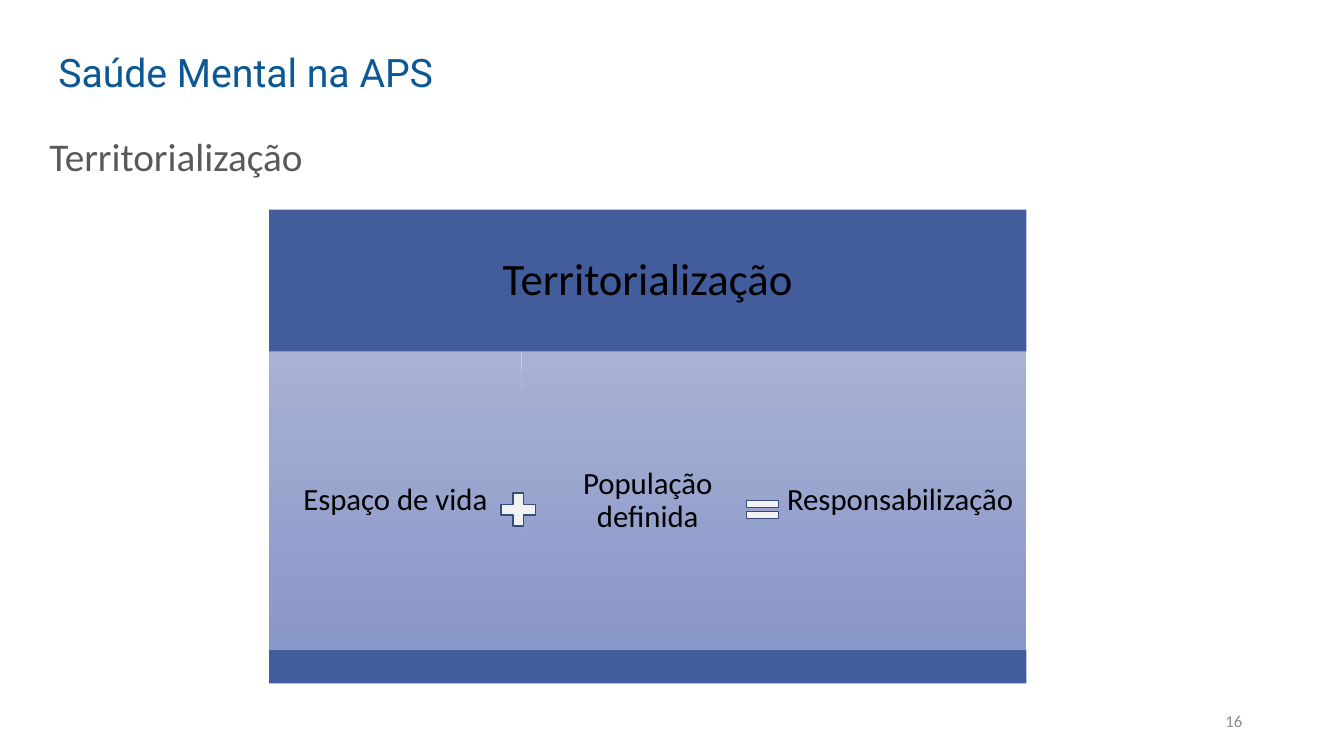
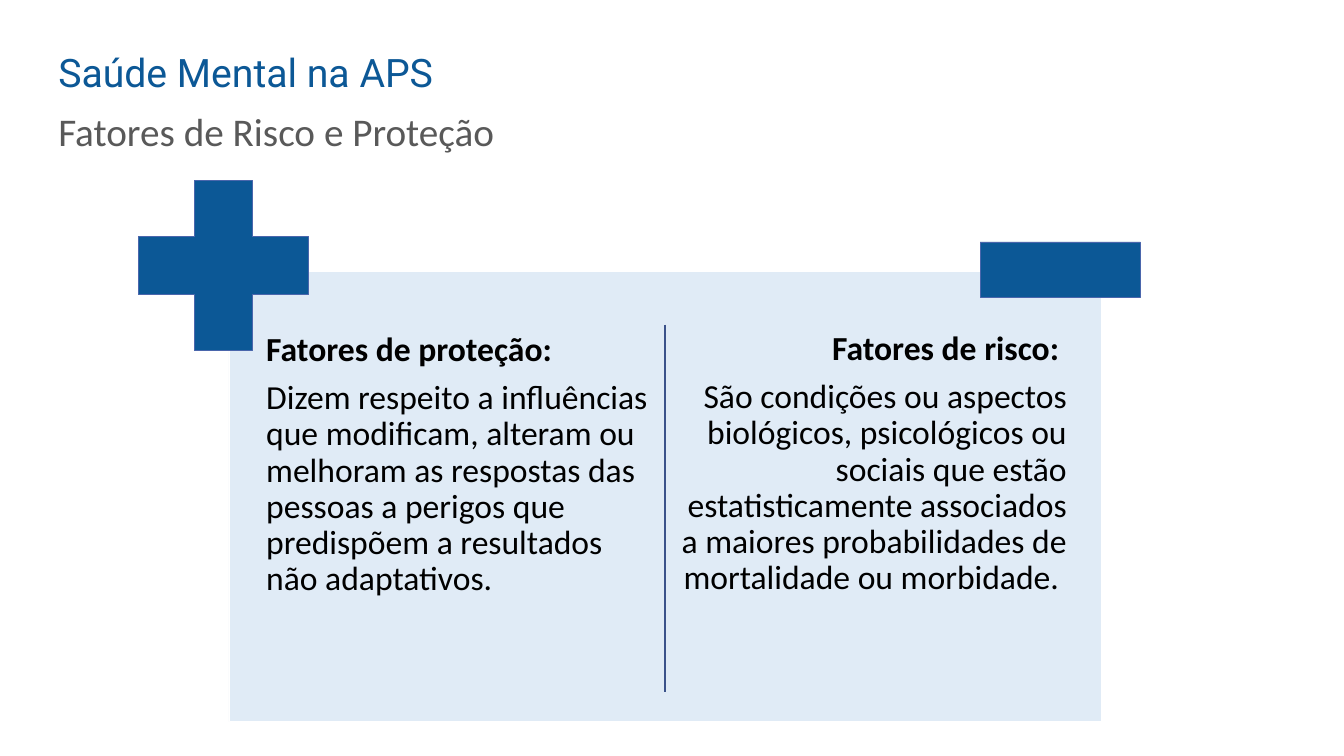
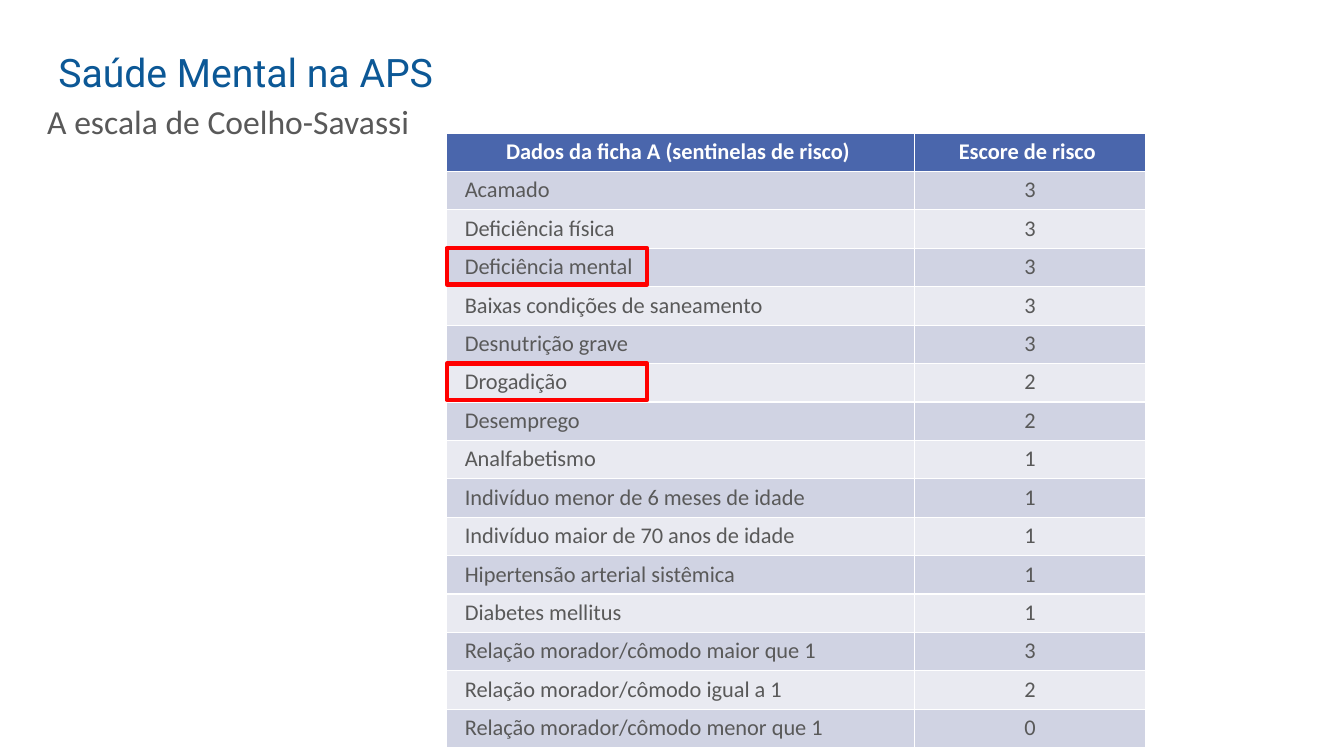
from lxml.etree import SubElement
from pptx import Presentation
from pptx.dml.color import RGBColor
from pptx.enum.shapes import MSO_CONNECTOR, MSO_SHAPE
from pptx.enum.text import MSO_ANCHOR, PP_ALIGN
from pptx.oxml.ns import qn
from pptx.util import Inches, Pt

BLUE, ACCENT, GREY, BLACK, WHITE = "0C5896", "4A66AC", "595959", "000000", "FFFFFF"
BAND, SIGN_FILL, SIGN_LINE = "435D9C", "F2F2F2", "374B7F"
PANEL, DIVIDER, MARK, NUMBER = "E0EBF6", "3B528A", "FF0000", "8C8C8C"
ROW_FILLS = ("E9EAF1", "D0D3E3")
COLUMN_TOP, COLUMN_BOTTOM = "A8B2D4", "8996C8"

PILLARS = ["Espaço de vida", "População definida", "Responsabilização"]
PROTECTION = [
    "Fatores de proteção:",
    "Dizem respeito a influências que modificam, alteram ou melhoram as respostas das "
    "pessoas a perigos que predispõem a resultados não adaptativos.",
]
RISK = [
    "Fatores de risco: ",
    "São condições ou aspectos biológicos, psicológicos ou sociais que estão "
    "estatisticamente associados a maiores probabilidades de mortalidade ou morbidade. ",
]
SCORES = [
    ("Dados da ficha A (sentinelas de risco) ", "Escore de risco "),
    ("Acamado", "3"),
    ("Deficiência física", "3"),
    ("Deficiência mental", "3"),
    ("Baixas condições de saneamento", "3"),
    ("Desnutrição grave", "3"),
    ("Drogadição", "2"),
    ("Desemprego", "2"),
    ("Analfabetismo", "1"),
    ("Indivíduo menor de 6 meses de idade", "1"),
    ("Indivíduo maior de 70 anos de idade", "1"),
    ("Hipertensão arterial sistêmica", "1"),
    ("Diabetes mellitus", "1"),
    ("Relação morador/cômodo maior que 1", "3"),
    ("Relação morador/cômodo igual a 1", "2"),
    ("Relação morador/cômodo menor que 1", "0"),
]
MARKED_ROWS = (3, 6)


def color(value):
    """Turn a hex string into a colour."""
    return RGBColor.from_string(value)


def set_margins(target, left, top, right, bottom):
    """Set the inner margins of a text frame or cell in inches."""
    target.margin_left, target.margin_top = Inches(left), Inches(top)
    target.margin_right, target.margin_bottom = Inches(right), Inches(bottom)


def style_para(para, size, ink, font="Calibri", bold=False, align=PP_ALIGN.LEFT, spacing=0.9):
    """Format one paragraph and its runs."""
    para.alignment = align
    para.line_spacing = spacing
    for span in para.runs:
        span.font.name, span.font.size, span.font.bold = font, Pt(size), bold
        span.font.color.rgb = color(ink)


def add_text(page, box, text, size, ink, anchor=MSO_ANCHOR.TOP, **style):
    """Place a one-paragraph text box."""
    frame = page.shapes.add_textbox(*map(Inches, box)).text_frame
    frame.word_wrap = True
    frame.vertical_anchor = anchor
    frame.text = text
    style_para(frame.paragraphs[0], size, ink, **style)


def add_block(page, box, fill=None, line=None, width=1, kind=MSO_SHAPE.RECTANGLE):
    """Place a flat shape with an optional fill and outline."""
    shape = page.shapes.add_shape(kind, *map(Inches, box))
    shape.shadow.inherit = False
    if fill:
        shape.fill.solid()
        shape.fill.fore_color.rgb = color(fill)
    else:
        shape.fill.background()
    if line:
        shape.line.color.rgb = color(line)
        shape.line.width = Pt(width)
    else:
        shape.line.fill.background()
    return shape


def label_block(shape, text, size, margin):
    """Write a centred black label inside a shape."""
    frame = shape.text_frame
    frame.word_wrap = True
    frame.vertical_anchor = MSO_ANCHOR.MIDDLE
    set_margins(frame, margin, margin, margin, margin)
    frame.text = text
    style_para(frame.paragraphs[0], size, BLACK, align=PP_ALIGN.CENTER)


def add_page(deck, subtitle, left, top, size=28):
    """Add a blank page with the shared title and its subtitle."""
    page = deck.slides.add_slide(deck.slide_layouts[6])
    add_text(page, (0.48, 0.43, 7.08, 0.57), "Saúde Mental na APS", 28, BLUE,
             font="Roboto", spacing=1.0)
    add_text(page, (left, top, 10.99, 0.76), subtitle, size, GREY)
    return page


def add_pillars(page, box):
    """Draw a heading band, gradient columns, a base band and the signs between columns."""
    left, top, width, height = box
    head, base = 1.41, 0.33
    body = height - head - base
    step = width / len(PILLARS)
    label_block(add_block(page, (left, top, width, head), BAND), "Territorialização", 32, 0.13)
    for index, name in enumerate(PILLARS):
        column = add_block(page, (left + index * step, top + head, step, body), COLUMN_TOP)
        column.fill.gradient()
        column.fill.gradient_angle = 270
        for stop, ink in zip(column.fill.gradient_stops, (COLUMN_TOP, COLUMN_BOTTOM)):
            stop.color.rgb = color(ink)
        label_block(column, name, 22, 0.09)
    add_block(page, (left, top + head + body, width, base), BAND)
    for kind, x, y, w, h in (
        (MSO_SHAPE.MATH_PLUS, 2.24, 2.75, 0.46, 0.45),
        (MSO_SHAPE.MATH_EQUAL, 4.68, 2.82, 0.43, 0.31),
    ):
        add_block(page, (left + x, top + y, w, h), SIGN_FILL, SIGN_LINE, kind=kind)


def add_factor(page, box, texts, align):
    """Place a bold heading with its description below."""
    frame = page.shapes.add_textbox(*map(Inches, box)).text_frame
    frame.word_wrap = True
    set_margins(frame, 0.05, 0.05, 0.05, 0.05)
    frame.text = "\n".join(texts)
    for index, para in enumerate(frame.paragraphs):
        style_para(para, 24, BLACK, bold=index == 0, align=align)
    frame.paragraphs[0].space_after = Pt(8.4)


def add_comparison(page, box):
    """Draw the panel with two factors, a divider and the plus and minus signs."""
    left, top, width, height = box
    add_block(page, box, PANEL, WHITE, 0.5)
    add_factor(page, (left + 0.32, top + 0.56, 4.02, 3.06), PROTECTION, PP_ALIGN.LEFT)
    add_factor(page, (left + 4.34, top + 0.55, 4.02, 3.06), RISK, PP_ALIGN.RIGHT)
    plus = add_block(page, (left - 0.9, top - 0.9, 1.69, 1.69), BLUE, ACCENT, 0.5,
                     MSO_SHAPE.CROSS)
    plus.adjustments[0] = 0.33
    add_block(page, (left + width - 1.2, top - 0.29, 1.59, 0.55), BLUE, ACCENT, 0.5)
    middle = Inches(left + width / 2)
    divider = page.shapes.add_connector(
        MSO_CONNECTOR.STRAIGHT, middle, Inches(top + 0.53), middle, Inches(top + height - 0.29))
    divider.line.color.rgb = color(DIVIDER)
    divider.line.width = Pt(1)
    SubElement(divider.element.spPr, qn("a:effectLst"))


def add_borders(cell):
    """Give a cell thin white borders on every side."""
    properties = cell._tc.get_or_add_tcPr()
    for side in ("a:lnL", "a:lnR", "a:lnT", "a:lnB"):
        line = SubElement(properties, qn(side), w=str(Pt(1)))
        SubElement(SubElement(line, qn("a:solidFill")), qn("a:srgbClr"), val=WHITE)


def fill_cell(cell, text, row, column):
    """Write and style one cell by its place in the table."""
    header = row == 0
    add_borders(cell)
    cell.fill.solid()
    cell.fill.fore_color.rgb = color(ACCENT if header else ROW_FILLS[row % 2])
    listed = column == 0 and not header
    set_margins(cell, 0.18 if listed else 0.08, 0.05, 0.08, 0.05)
    cell.vertical_anchor = MSO_ANCHOR.MIDDLE if header else MSO_ANCHOR.TOP
    cell.text = text
    style_para(cell.text_frame.paragraphs[0], 16, WHITE if header else GREY, bold=header,
               align=PP_ALIGN.LEFT if listed else PP_ALIGN.CENTER, spacing=1.0)


def add_scores(page, box):
    """Draw the score table and frame the marked rows."""
    left, top, width, height = box
    step = height / len(SCORES)
    table = page.shapes.add_table(len(SCORES), 2, *map(Inches, box)).table
    table.columns[0].width, table.columns[1].width = Inches(4.64), Inches(width - 4.64)
    for row, values in enumerate(SCORES):
        table.rows[row].height = Inches(step)
        for column, text in enumerate(values):
            fill_cell(table.cell(row, column), text, row, column)
    for row in MARKED_ROWS:
        add_block(page, (left, top + row * step, 1.99, 0.36), line=MARK, width=3)


def main():
    """Build and save the deck."""
    deck = Presentation()
    deck.slide_width, deck.slide_height = Inches(13.33), Inches(7.5)

    territory = add_page(deck, "Territorialização", 0.39, 1.32)
    add_pillars(territory, (2.67, 2.08, 7.51, 4.7))
    add_text(territory, (9.42, 6.95, 3, 0.4), "16", 12, NUMBER, MSO_ANCHOR.MIDDLE,
             align=PP_ALIGN.RIGHT, spacing=1.0)

    factors = add_page(deck, "Fatores de Risco e Proteção", 0.48, 1.07)
    add_comparison(factors, (2.27, 2.69, 8.65, 4.47))

    scale = add_page(deck, "A escala de Coelho-Savassi", 0.37, 1, 24)
    add_scores(scale, (4.43, 1.32, 6.93, 6.1))

    deck.save("out.pptx")


if __name__ == "__main__":
    main()
